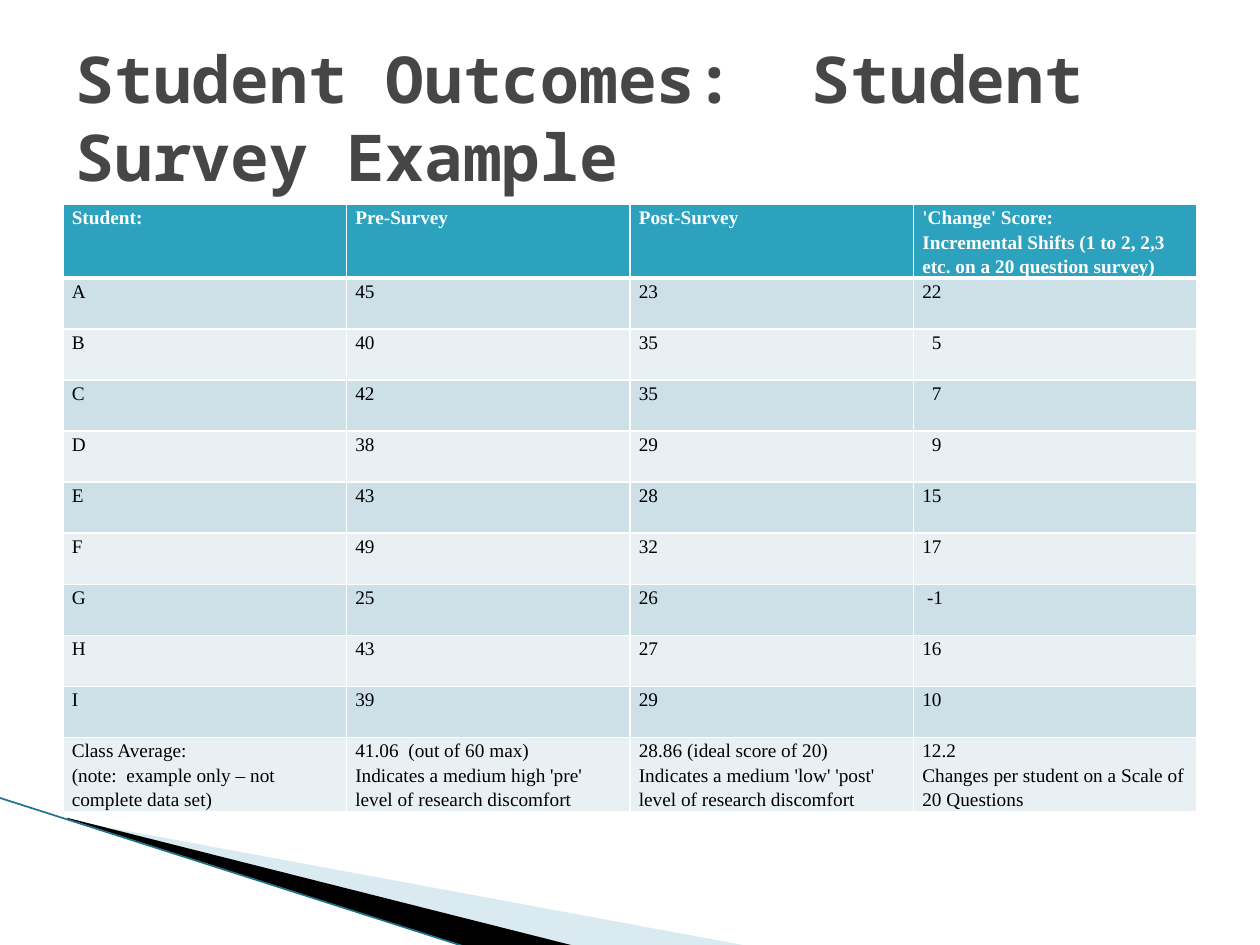
from pptx import Presentation
from pptx.dml.color import RGBColor
from pptx.enum.shapes import MSO_CONNECTOR as Connector
from pptx.enum.text import MSO_ANCHOR as Anchor, PP_ALIGN as Align
from pptx.oxml.ns import qn
from pptx.util import Inches, Pt
from lxml.etree import SubElement

TITLE = "Student Outcomes:  Student Survey Example"
HEADER = [
    ["Student:"],
    ["Pre-Survey"],
    ["Post-Survey"],
    ["'Change' Score:",
     "Incremental Shifts (1 to 2, 2,3 etc. on a 20 question survey)"],
]
SCORES = [
    ("A", 45, 23, 22),
    ("B", 40, 35, 5),
    ("C", 42, 35, 7),
    ("D", 38, 29, 9),
    ("E", 43, 28, 15),
    ("F", 49, 32, 17),
    ("G", 25, 26, -1),
    ("H", 43, 27, 16),
    ("I", 39, 29, 10),
]
AVERAGES = [
    ["Class Average:", "(note:  example only – not complete data set)"],
    ["41.06  (out of 60 max)",
     "Indicates a medium high 'pre' level of research discomfort"],
    ["28.86 (ideal score of 20)",
     "Indicates a medium 'low' 'post' level of research discomfort"],
    ["12.2", "Changes per student on a Scale of 20 Questions"],
]
WEDGES = [
    ("A0CBDC", 40, [(0.55, 6.51), (5.95, 7.51), (4.56, 7.51), (0.55, 6.5)]),
    ("000000", 100, [(0.53, 6.49), (4.57, 7.51), (3.72, 7.52), (0.54, 6.5)]),
]
EDGE = [(-0.01, 6.33), (3.71, 7.52)]
EDGE_COLOUR = "1F7387"
HEADER_FILL, BAND_FILLS = "2DA2BF", ("CDE0E8", "E8F0F4")
WHITE, BLACK, GREY = "FFFFFF", "000000", "464646"
LEFT, WIDTH = 0.5, 9
SPACE_WIDTH = 2.75


def colour(value):
    return RGBColor.from_string(value)


def style(target, values):
    for name, value in values.items():
        setattr(target, name, value)


def format_font(para, face, size, shade, bold):
    style(para.font, {"name": face, "size": Pt(size), "bold": bold})
    para.font.color.rgb = colour(shade)


def add_wedge(page, shade, opacity, points):
    corners = [(round(x * 100), round(y * 100)) for x, y in points]
    builder = page.shapes.build_freeform(*corners[0], scale=Inches(0.01))
    builder.add_line_segments(corners[1:], close=True)
    wedge = builder.convert_to_shape()
    wedge.shadow.inherit = False
    wedge.line.fill.background()
    wedge.fill.solid()
    wedge.fill.fore_color.rgb = colour(shade)
    if opacity < 100:
        tint = next(wedge.element.spPr.iter(qn("a:srgbClr")))
        SubElement(tint, qn("a:alpha")).set("val", str(opacity * 1000))


def add_edge(page):
    ends = [Inches(value) for point in EDGE for value in point]
    edge = page.shapes.add_connector(Connector.STRAIGHT, *ends)
    edge.line.color.rgb = colour(EDGE_COLOUR)
    edge.line.width = Pt(0.95)
    SubElement(edge.element.spPr, qn("a:effectLst"))


def add_borders(cell, bottom):
    properties = cell._tc.get_or_add_tcPr()
    for side, width in (("L", 1), ("R", 1), ("T", 1), ("B", bottom)):
        border = SubElement(properties, qn(f"a:ln{side}"), w=str(Pt(width)))
        paint = SubElement(border, qn("a:solidFill"))
        SubElement(paint, qn("a:srgbClr"), val=WHITE)


def fill_cell(cell, lines, fill, is_header):
    add_borders(cell, 3 if is_header else 1)
    style(cell, {"margin_left": Inches(0.07), "margin_right": Inches(0.07),
                 "margin_top": 0, "margin_bottom": 0,
                 "vertical_anchor": Anchor.TOP})
    cell.fill.solid()
    cell.fill.fore_color.rgb = colour(fill)
    cell.text = "\n".join(lines)
    for para in cell.text_frame.paragraphs:
        para.line_spacing = 1.15
        format_font(para, "Times New Roman", 11,
                    WHITE if is_header else BLACK, is_header)


def indent_change(cell, change):
    spaces = 0 if abs(change) > 9 else 1 if change < 0 else 2
    if spaces:
        properties = cell.text_frame.paragraphs[0]._p.get_or_add_pPr()
        properties.set("marL", str(Pt(spaces * SPACE_WIDTH)))


def add_scores(page):
    rows = [HEADER]
    rows += [[[str(value)] for value in record] for record in SCORES]
    rows.append(AVERAGES)
    frame = page.shapes.add_table(
        len(rows), len(HEADER), Inches(LEFT), Inches(1.62),
        Inches(WIDTH), Inches(4.46))
    table = frame.table
    table.horz_banding = False
    for r, row in enumerate(rows):
        fill = BAND_FILLS[(r - 1) % 2] if r else HEADER_FILL
        for c, lines in enumerate(row):
            fill_cell(table.cell(r, c), lines, fill, r == 0)
    for r, record in enumerate(SCORES, 1):
        indent_change(table.cell(r, len(HEADER) - 1), record[-1])


def set_title(page):
    title = page.shapes.title
    style(title, {"left": Inches(LEFT), "top": Inches(0.3),
                  "width": Inches(WIDTH), "height": Inches(1.25)})
    style(title.text_frame, {"text": TITLE, "word_wrap": True,
                             "vertical_anchor": Anchor.MIDDLE})
    para = title.text_frame.paragraphs[0]
    style(para, {"alignment": Align.LEFT, "line_spacing": 1.0})
    format_font(para, "Noto Sans Mono", 36.9, GREY, True)


def main():
    deck = Presentation()
    style(deck, {"slide_width": Inches(10), "slide_height": Inches(7.5)})
    page = deck.slides.add_slide(deck.slide_layouts[5])
    set_title(page)
    for wedge in WEDGES:
        add_wedge(page, *wedge)
    add_edge(page)
    add_scores(page)
    deck.save("out.pptx")


if __name__ == "__main__":
    main()
